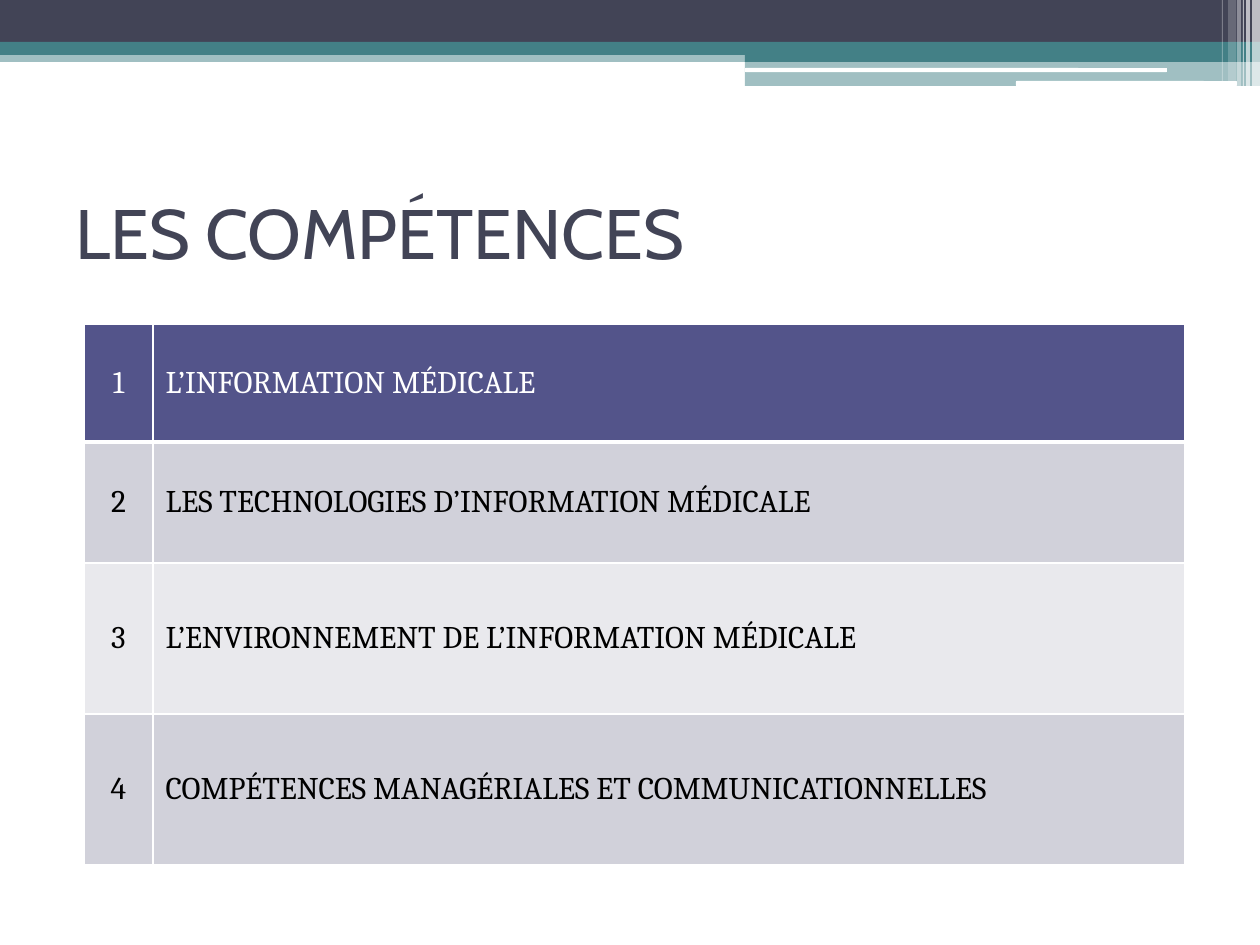
from lxml import etree
from pptx import Presentation
from pptx import util as u
from pptx.dml.color import RGBColor
from pptx.enum import shapes, text
from pptx.oxml.ns import qn

PX = 914400 / 126  # EMU per px

WHITE = RGBColor(0xFF, 0xFF, 0xFF)
BLACK = RGBColor(0x00, 0x00, 0x00)
SLATE = RGBColor(0x42, 0x44, 0x56)
TEAL = RGBColor(0x43, 0x80, 0x86)
INDIGO = RGBColor(0x53, 0x54, 0x8A)
BAND_DARK = RGBColor(0xD1, 0xD1, 0xDA)
BAND_LIGHT = RGBColor(0xE9, 0xE9, 0xED)

TITLE = "LES COMPÉTENCES"
SKILLS = [
    "L’INFORMATION MÉDICALE",
    "LES TECHNOLOGIES D’INFORMATION MÉDICALE",
    "L’ENVIRONNEMENT DE L’INFORMATION MÉDICALE",
    "COMPÉTENCES MANAGÉRIALES ET COMMUNICATIONNELLES",
]
COLUMN_WIDTHS = [69, 1032]
ROW_HEIGHTS = [118, 121, 151, 151]

RECT = shapes.MSO_SHAPE.RECTANGLE
ROUND = shapes.MSO_SHAPE.ROUNDED_RECTANGLE

# Header bands: shape, left, top, width, height, colour, opacity in percent
BANDS = [
    (RECT, 0, 50, 1260, 12, TEAL, 50),
    (RECT, 0, 0, 1260, 42, SLATE, 100),
    (RECT, 0, 42, 1260, 13, TEAL, 100),
    (RECT, 745, 49, 515, 13, TEAL, 100),
    (RECT, 745, 61, 515, 25, TEAL, 50),
    (ROUND, 745, 68, 422, 4, WHITE, 100),
    (ROUND, 1016, 81, 221, 5, WHITE, 100),
]
# Stripes at the right edge: left, width, height, opacity in percent
STRIPES = [
    (1252, 8, 86, 65),
    (1246, 4, 86, 65),
    (1243, 1, 86, 60),
    (1237, 4, 86, 40),
    (1228, 8, 81, 20),
    (1222, 1, 81, 30),
]


def px(value):
    return u.Emu(round(value * PX))


def add_bar(page, kind, left, top, width, height, color, opacity):
    bar = page.shapes.add_shape(kind, px(left), px(top), px(width), px(height))
    bar.shadow.inherit = False
    bar.line.fill.background()
    bar.fill.solid()
    bar.fill.fore_color.rgb = color
    if opacity < 100:
        tint = bar.fill._xPr.find(".//" + qn("a:srgbClr"))
        etree.SubElement(tint, qn("a:alpha"), val=str(opacity * 1000))


def add_span(para, wording, font, size, color):
    span = para.add_run()
    span.text = wording
    span.font.name = font
    span.font.size = u.Pt(size)
    span.font.bold = False
    span.font.color.rgb = color


def set_border(cell, side, points):
    props = cell._tc.get_or_add_tcPr()
    line = etree.Element(qn("a:ln" + side), w=str(u.Pt(points)))
    fill = etree.SubElement(line, qn("a:solidFill"))
    etree.SubElement(fill, qn("a:srgbClr"), val=str(WHITE))
    props.insert("LRTB".index(side), line)


def add_skills_table(page):
    frame = page.shapes.add_table(
        len(SKILLS), len(COLUMN_WIDTHS), px(84), px(324),
        px(sum(COLUMN_WIDTHS)), px(sum(ROW_HEIGHTS)))
    table = frame.table
    for column, width in zip(table.columns, COLUMN_WIDTHS):
        column.width = px(width)
    for index, (skill, height) in enumerate(zip(SKILLS, ROW_HEIGHTS)):
        table.rows[index].height = px(height)
        header = index == 0
        fill = INDIGO if header else (BAND_LIGHT, BAND_DARK)[index % 2]
        for col, wording in enumerate((str(index + 1), skill)):
            cell = table.cell(index, col)
            cell.fill.solid()
            cell.fill.fore_color.rgb = fill
            cell.vertical_anchor = text.MSO_ANCHOR.MIDDLE
            for side in "LRTB":
                thick = (header and side == "B") or (index == 1 and side == "T")
                set_border(cell, side, 3 if thick else 1)
            para = cell.text_frame.paragraphs[0]
            para.alignment = (text.PP_ALIGN.CENTER, text.PP_ALIGN.LEFT)[col]
            add_span(para, wording, "Cambria", 18, WHITE if header else BLACK)


def main():
    deck = Presentation()
    deck.slide_width, deck.slide_height = px(1260), px(945)
    page = deck.slides.add_slide(deck.slide_layouts[6])

    # Header decoration
    for band in BANDS:
        add_bar(page, *band)
    for left, width, height, opacity in STRIPES:
        add_bar(page, RECT, left, 0, width, height, WHITE, opacity)

    # Title
    box = page.shapes.add_textbox(px(63), px(158), px(1134), px(147))
    box.text_frame.word_wrap = True
    box.text_frame.vertical_anchor = text.MSO_ANCHOR.MIDDLE
    add_span(box.text_frame.paragraphs[0], TITLE, "Cabin", 40, SLATE)

    # Numbered skills
    add_skills_table(page)
    deck.save("out.pptx")


if __name__ == "__main__":
    main()
